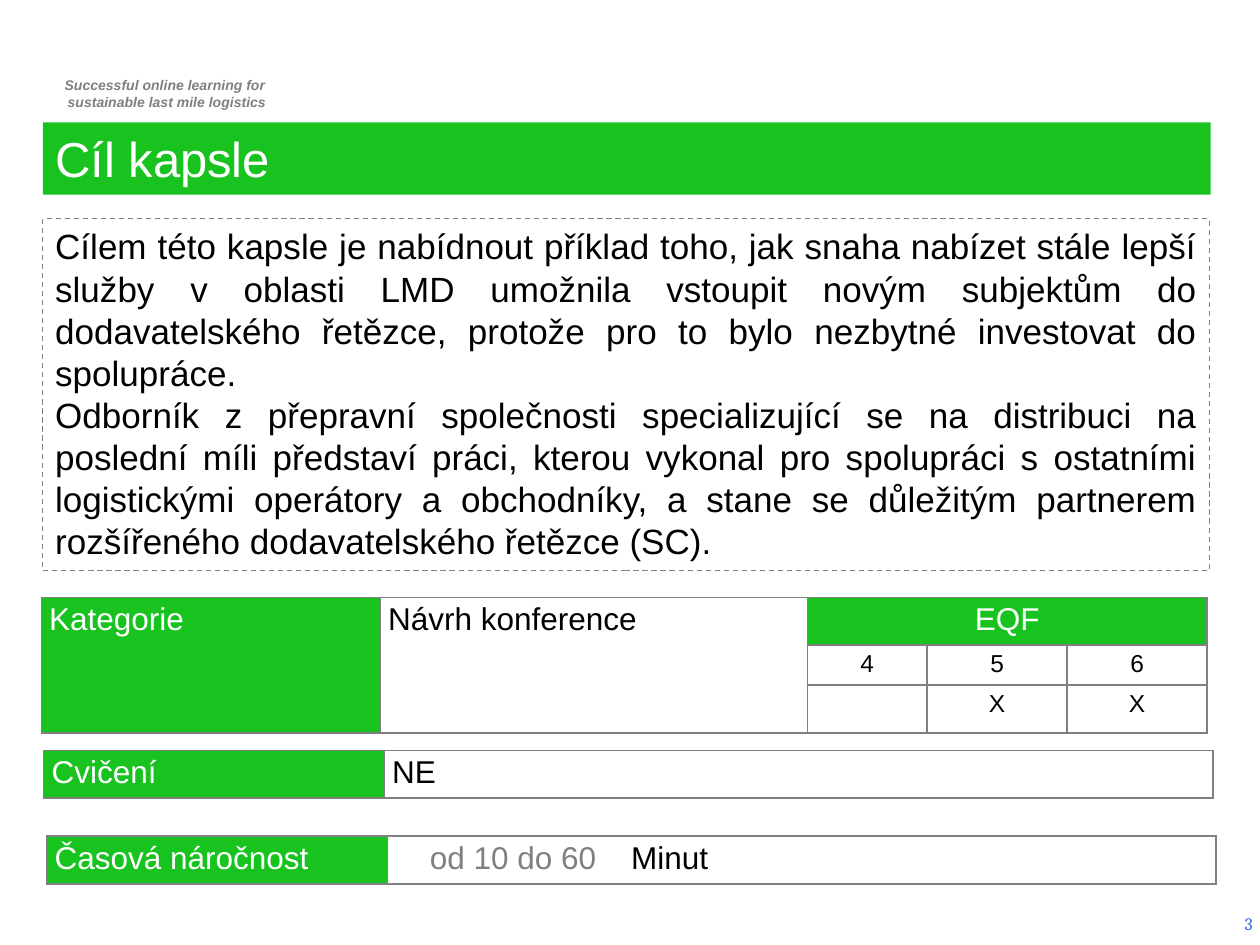
from lxml.etree import SubElement
from pptx import Presentation
from pptx.dml.color import RGBColor
from pptx.enum.dml import MSO_LINE
from pptx.enum.shapes import MSO_SHAPE
from pptx.enum.text import MSO_ANCHOR, PP_ALIGN
from pptx.oxml import parse_xml
from pptx.oxml.ns import nsdecls, qn
from pptx.util import Pt

GREEN = RGBColor(0x18, 0xC3, 0x20)
GREY = RGBColor(0x80, 0x80, 0x80)
DARK_GREY = RGBColor(0x7F, 0x7F, 0x7F)
BLUE = RGBColor(0x33, 0x66, 0xCC)
WHITE = RGBColor(0xFF, 0xFF, 0xFF)
BLACK = RGBColor(0, 0, 0)

GOAL = (
    "Cílem této kapsle je nabídnout příklad toho, jak snaha nabízet stále lepší služby "
    "v oblasti LMD umožnila vstoupit novým subjektům do dodavatelského řetězce, protože "
    "pro to bylo nezbytné investovat do spolupráce.\n"
    "Odborník z přepravní společnosti specializující se na distribuci na poslední míli "
    "představí práci, kterou vykonal pro spolupráci s ostatními logistickými operátory "
    "a obchodníky, a stane se důležitým partnerem rozšířeného dodavatelského řetězce (SC)."
)


def style_text(frame, size, color, align, font="Arial", emphasis=False):
    """Format every paragraph and run of a text frame."""
    frame.word_wrap = True
    for paragraph in frame.paragraphs:
        paragraph.alignment = align
        for span in paragraph.runs:
            span.font.name = font
            span.font.size = Pt(size)
            span.font.color.rgb = color
            span.font.bold = span.font.italic = emphasis


def add_label(page, area, text, size, color, align, **style):
    """Add a plain text box and return its frame."""
    frame = page.shapes.add_textbox(*map(Pt, area)).text_frame
    frame.text = text
    style_text(frame, size, color, align, **style)
    return frame


def add_panel(page, area, text, size, color, align):
    """Add a rectangle with text, leaving fill and line empty."""
    box = page.shapes.add_shape(MSO_SHAPE.RECTANGLE, *map(Pt, area))
    box.shadow.inherit = False
    box.fill.background()
    box.line.fill.background()
    box.text_frame.text = text
    box.text_frame.vertical_anchor = MSO_ANCHOR.TOP
    style_text(box.text_frame, size, color, align)
    return box


def add_borders(cell):
    """Draw a thin grey line on all four sides of a cell."""
    properties = cell._tc.get_or_add_tcPr()
    for index, side in enumerate(("lnL", "lnR", "lnT", "lnB")):
        properties.insert(index, parse_xml(
            f'<a:{side} {nsdecls("a")} w="{Pt(1)}"><a:solidFill>'
            f'<a:srgbClr val="{GREY}"/></a:solidFill></a:{side}>'))


def add_grid(page, left, top, widths, heights):
    """Add an unstyled table with grey borders."""
    area = (left, top, sum(widths), sum(heights))
    table = page.shapes.add_table(len(heights), len(widths), *map(Pt, area)).table
    table.first_row = table.horz_banding = False
    for column, width in zip(table.columns, widths):
        column.width = Pt(width)
    for row, height in zip(table.rows, heights):
        row.height = Pt(height)
    for cell in table.iter_cells():
        cell.margin_left = cell.margin_right = Pt(4.5)
        cell.margin_top = cell.margin_bottom = Pt(2.9)
        cell.fill.background()
        add_borders(cell)
    return table


def fill_cell(cell, text, size=18, align=PP_ALIGN.JUSTIFY, heading=False):
    """Write a cell, in white on green when it is a heading."""
    cell.text = text
    if heading:
        cell.fill.solid()
        cell.fill.fore_color.rgb = GREEN
    style_text(cell.text_frame, size, WHITE if heading else BLACK, align)


def add_category_table(page):
    """Add the category table with its EQF levels."""
    table = add_grid(page, 23.6, 341.3, (193.7, 244.1, 68.4, 80, 80), (26.9, 22.3, 26.9))
    for column in (0, 1):
        table.cell(0, column).merge(table.cell(2, column))
    table.cell(0, 2).merge(table.cell(0, 4))
    fill_cell(table.cell(0, 0), "Kategorie", heading=True)
    fill_cell(table.cell(0, 1), "Návrh konference")
    fill_cell(table.cell(0, 2), "EQF", align=PP_ALIGN.CENTER, heading=True)
    for column, (level, mark) in enumerate((("4", ""), ("5", "X"), ("6", "X")), start=2):
        fill_cell(table.cell(1, column), level, 14, PP_ALIGN.CENTER)
        fill_cell(table.cell(2, column), mark, 14, PP_ALIGN.CENTER)


def add_fact_table(page, left, top, label, value):
    """Add a one-row table and return its value cell."""
    table = add_grid(page, left, top, (194.6, 473.6), (26.7,))
    fill_cell(table.cell(0, 0), label, heading=True)
    fill_cell(table.cell(0, 1), value)
    return table.cell(0, 1)


def add_duration_table(page):
    """Add the duration table, its unit set at a tab stop."""
    cell = add_fact_table(page, 26.7, 477.6, "Časová náročnost", "")
    cell.margin_left = Pt(24.4)
    paragraph = cell.text_frame.paragraphs[0]
    stops = SubElement(paragraph._p.get_or_add_pPr(), qn("a:tabLst"))
    SubElement(stops, qn("a:tab"), pos=str(Pt(115)), algn="l")
    for text in ("od 10 do 60", "\tMinut"):
        paragraph.add_run().text = text
    style_text(cell.text_frame, 18, BLACK, PP_ALIGN.LEFT)
    paragraph.runs[0].font.color.rgb = DARK_GREY


def main():
    """Build the slide and save it."""
    deck = Presentation()
    deck.slide_width, deck.slide_height = Pt(720), Pt(540)
    page = deck.slides.add_slide(deck.slide_layouts[6])
    motto = add_label(page, (20.9, 40.3, 146.2, 26.6),
                      "Successful online learning for \nsustainable last mile logistics",
                      8, DARK_GREY, PP_ALIGN.CENTER, emphasis=True)
    for paragraph in motto.paragraphs:
        paragraph._p.get_or_add_pPr().set("marL", str(Pt(2.9)))
    number = add_label(page, (555.1, 513.4, 167.8, 28.8), "3", 10, BLUE,
                       PP_ALIGN.RIGHT, font="Cambria")
    number.vertical_anchor = MSO_ANCHOR.MIDDLE
    title = add_panel(page, (24.5, 70, 667.4, 41.2), "Cíl kapsle", 28, WHITE, PP_ALIGN.LEFT)
    title.fill.solid()
    title.fill.fore_color.rgb = GREEN
    goal = add_panel(page, (24.5, 125, 666.7, 201), GOAL, 20, BLACK, PP_ALIGN.JUSTIFY)
    goal.line.color.rgb = GREY
    goal.line.width = Pt(0.75)
    goal.line.dash_style = MSO_LINE.DASH
    add_category_table(page)
    add_fact_table(page, 25, 428.7, "Cvičení", "NE")
    add_duration_table(page)
    deck.save("out.pptx")


if __name__ == "__main__":
    main()
